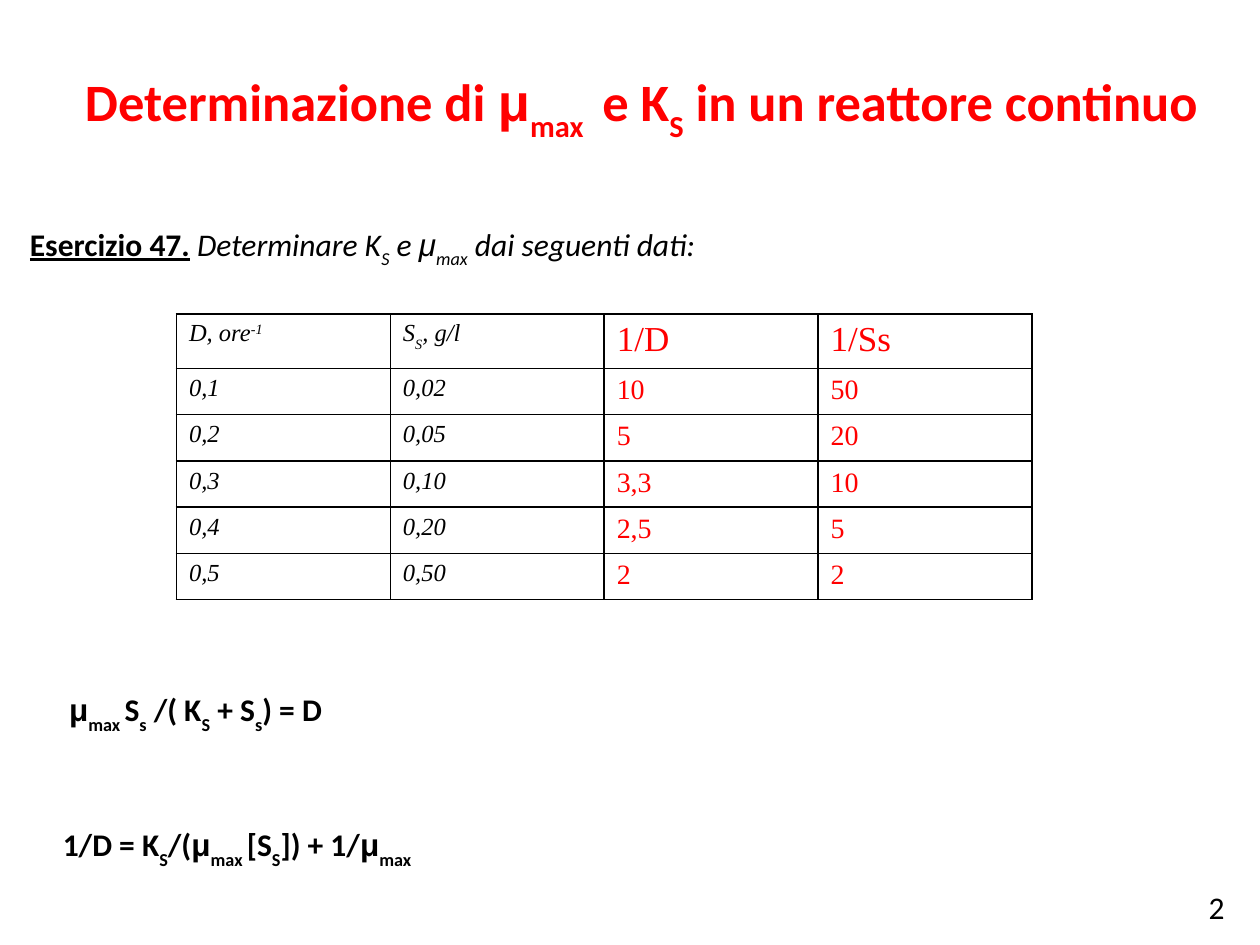
import pptx
import pptx.util
import pptx.dml.color
import pptx.enum.text
import pptx.oxml
import pptx.oxml.ns

Pt = pptx.util.Pt
RGB = pptx.dml.color.RGBColor
ALIGN = pptx.enum.text.PP_ALIGN

RED = RGB(0xFF, 0, 0)
BLACK = RGB(0, 0, 0)
SHIFT = {"_": "-30000", "^": "30000"}


def put(par, text, size=18, font="Calibri", color=BLACK,
        bold=False, italic=False, line=False):
    """Add runs split at |; a leading _ lowers a run and ^ raises it."""
    for part in text.split("|"):
        run = par.add_run()
        run.text = part.lstrip("_^")
        face = run.font
        face.name = "Arial" if part == "μ" else font
        face.size = Pt(size)
        face.bold, face.italic, face.underline = bold, italic, line
        face.color.rgb = color
        if part[0] in SHIFT:
            run._r.get_or_add_rPr().set("baseline", SHIFT[part[0]])


class Page:
    border = 1
    serif = "Times New Roman"

    def __init__(self, deck):
        self.slide = deck.slides.add_slide(deck.slide_layouts[6])

    def box(self, left, top, width, height, wrap=True):
        shape = self.slide.shapes.add_textbox(
            Pt(left), Pt(top), Pt(width), Pt(height))
        shape.text_frame.word_wrap = wrap
        return shape.text_frame

    def edge(self, cell):
        props = cell._tc.get_or_add_tcPr()
        for at, side in enumerate(("lnL", "lnR", "lnT", "lnB")):
            props.insert(at, pptx.oxml.parse_xml(
                f'<a:{side} {pptx.oxml.ns.nsdecls("a")} w="{Pt(self.border)}">'
                f'<a:solidFill><a:srgbClr val="{BLACK}"/></a:solidFill>'
                f'</a:{side}>'))

    def grid(self, left, top, width, rows, highs):
        count = len(rows[0])
        table = self.slide.shapes.add_table(
            len(rows), count, Pt(left), Pt(top),
            Pt(width), Pt(sum(highs))).table
        table.first_row = table.horz_banding = False
        for col in table.columns:
            col.width = Pt(width / count)
        for r, row in enumerate(rows):
            table.rows[r].height = Pt(highs[r])
            for c, text in enumerate(row):
                cell = table.cell(r, c)
                cell.fill.background()
                self.edge(cell)
                par = cell.text_frame.paragraphs[0]
                # Given data on the left, computed values on the right
                if c < 2:
                    put(par, text, size=14, font=self.serif, italic=True)
                else:
                    put(par, text, size=16 if r else 20,
                        font=self.serif, color=RED)


def main():
    deck = pptx.Presentation()
    deck.slide_width, deck.slide_height = Pt(720), Pt(540)
    page = Page(deck)

    # Slide number
    put(page.box(683.5, 504, 38, 36, wrap=False).paragraphs[0], "2")

    # Title and exercise
    head = page.box(10, 36, 720, 307.5)
    title = head.paragraphs[0]
    title.alignment = ALIGN.CENTER
    put(title, "Determinazione di |μ|_max | e K|_S| in un reattore continuo ",
        size=30, color=RED, bold=True)
    task = head.add_paragraph()
    task.alignment = ALIGN.JUSTIFY
    task.space_before = Pt(46.5)
    put(task, "Esercizio 47.", bold=True, line=True)
    put(task, " |Determinare K|_S| e |μ|_max| dai seguenti dati:", italic=True)

    # Data table
    rows = [
        ("D, ore|^-1", "S|_S|, g/l", "1/D", "1/Ss"),
        ("0,1", "0,02", "10", "50"),
        ("0,2", "0,05", "5", "20"),
        ("0,3", "0,10", "3,3", "10"),
        ("0,4", "0,20", "2,5", "5"),
        ("0,5", "0,50", "2", "2"),
    ]
    page.grid(100.8, 179.3, 489, rows, [31] + [26.4] * 5)

    # Equations
    put(page.box(28.8, 468, 368.6, 36).paragraphs[0],
        "1/D = K|_S|/(|μ|_max |[S|_S|]) + 1/|μ|_max", bold=True)
    put(page.box(32.4, 391, 365, 29).paragraphs[0],
        "μ|_max |S|_s| /( K|_S| + S|_s|) = D", bold=True)

    deck.save("out.pptx")


if __name__ == "__main__":
    main()
